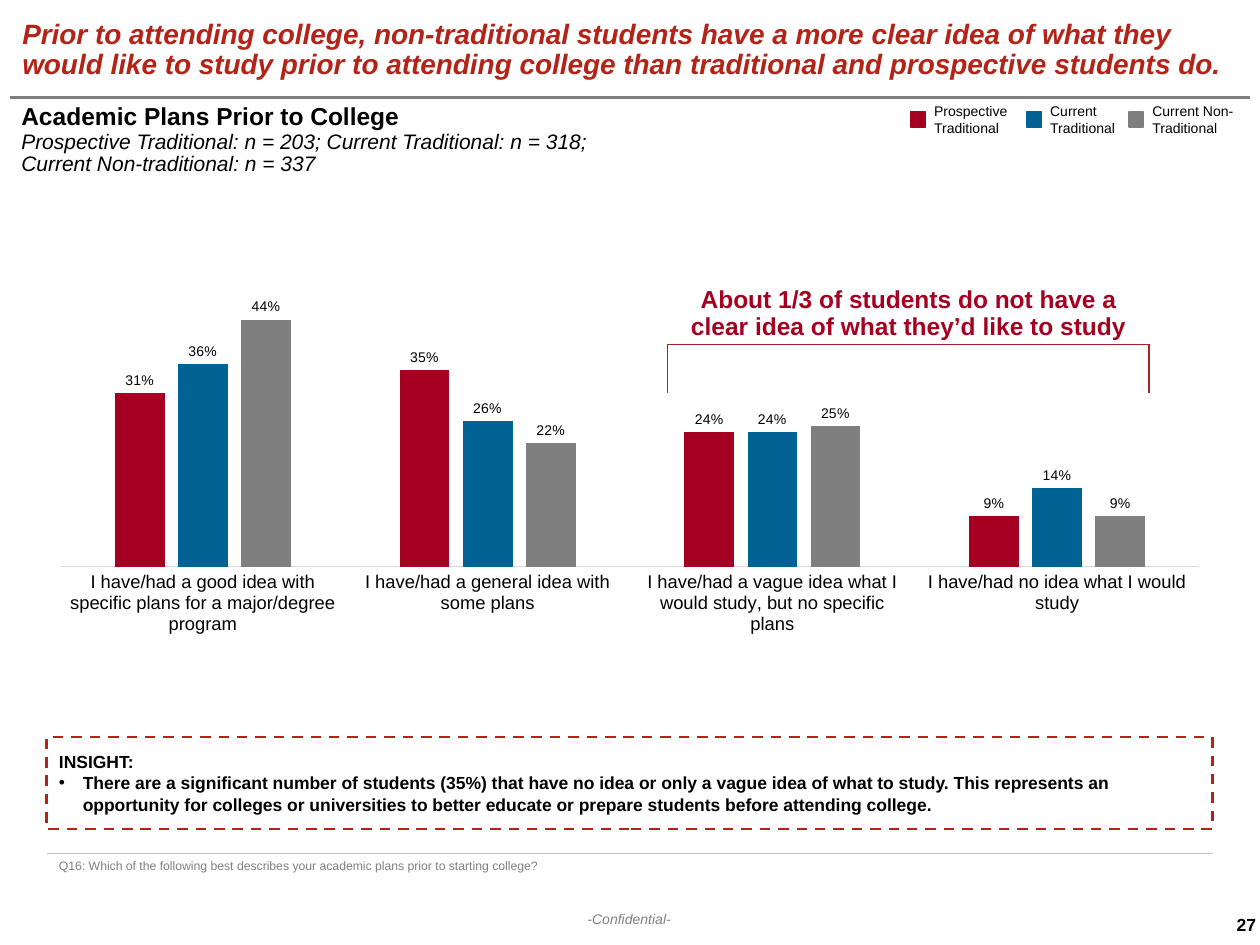
from itertools import pairwise

from lxml import etree
from pptx import Presentation
from pptx.chart.data import CategoryChartData
from pptx.dml.color import RGBColor
from pptx.enum.chart import XL_CHART_TYPE, XL_LABEL_POSITION, XL_TICK_MARK
from pptx.enum.dml import MSO_LINE
from pptx.enum.shapes import MSO_CONNECTOR, MSO_SHAPE
from pptx.enum.text import MSO_ANCHOR, PP_ALIGN
from pptx.oxml import parse_xml
from pptx.oxml.ns import nsdecls, qn
from pptx.util import Cm, Pt

TOP, MID = MSO_ANCHOR.TOP, MSO_ANCHOR.MIDDLE
LEFT, CENTER = PP_ALIGN.LEFT, PP_ALIGN.CENTER
RECT = MSO_SHAPE.RECTANGLE
FONT = "Arial"

BLACK = RGBColor(0, 0, 0)
GREY = RGBColor(0x80, 0x80, 0x80)
PALE = RGBColor(0xBF, 0xBF, 0xBF)
AXIS = RGBColor(0xD9, 0xD9, 0xD9)
BRICK = RGBColor(0xB3, 0x23, 0x17)
RUST = RGBColor(0xB0, 0x1F, 0x24)
RED = RGBColor(0xA5, 0x00, 0x21)
BLUE = RGBColor(0x00, 0x63, 0x93)
STONE = RGBColor(0x7F, 0x7F, 0x7F)

TITLE = ("Prior to attending college, non-traditional students have a more "
         "clear idea of what they would like to study prior to attending "
         "college than traditional and prospective students do.")
HEAD = "Academic Plans Prior to College"
BASE = ("Prospective Traditional: n = 203; Current Traditional: n = 318; "
        "Current Non-traditional: n = 337")
CALL = ("About 1/3 of students do not have a clear idea of what they’d "
        "like to study")
POINT = ("There are a significant number of students (35%) that have no idea "
         "or only a vague idea of what to study. This represents an "
         "opportunity for colleges or universities to better educate or "
         "prepare students before attending college.")
ASK = ("Q16: Which of the following best describes your academic plans prior "
       "to starting college?")

PLANS = ["I have/had a good idea with specific plans for a major/degree program",
         "I have/had a general idea with some plans",
         "I have/had a vague idea what I would study, but no specific plans",
         "I have/had no idea what I would study"]
# name, colour, shares, legend left, legend text width
GROUPS = [
    ("Prospective Traditional", RED, (0.31, 0.35, 0.24, 0.09), 18.36, 2.06),
    ("Current Traditional", BLUE, (0.36, 0.26, 0.24, 0.14), 20.7, 2.06),
    ("Current Non-Traditional", STONE, (0.44, 0.22, 0.25, 0.09), 22.76, 2.57),
]
BRACE = [(13.46, 7.92), (13.46, 6.94), (23.16, 6.94), (23.16, 7.92)]

deck = Presentation()
deck.slide_width, deck.slide_height = Cm(25.4), Cm(19.05)
slide = deck.slides.add_slide(deck.slide_layouts[6])
shapes = slide.shapes


def style(font, size, color=BLACK, bold=False, italic=False):
    font.name, font.size = FONT, Pt(size)
    font.bold, font.italic = bold, italic
    font.color.rgb = color


def write(frame, paras, anchor=TOP, align=LEFT, space=None, wrap=True):
    """Fill a frame; each paragraph is its text and its style arguments."""
    frame.word_wrap, frame.vertical_anchor = wrap, anchor
    for i, (text, *look) in enumerate(paras):
        para = frame.add_paragraph() if i else frame.paragraphs[0]
        para.alignment = align
        if space:
            para.line_spacing = space
        run = para.add_run()
        run.text = text
        style(run.font, *look)


def label(box, paras, **opts):
    frame = shapes.add_textbox(*map(Cm, box)).text_frame
    write(frame, paras, **opts)
    return frame


def rule(start, end, color, width):
    line = shapes.add_connector(MSO_CONNECTOR.STRAIGHT,
                                *map(Cm, (*start, *end)))
    line.line.color.rgb, line.line.width = color, Pt(width)
    etree.SubElement(line._element.spPr, qn("a:effectLst"))


def block(box, color, width):
    shape = shapes.add_shape(RECT, *map(Cm, box))
    shape.shadow.inherit = False
    shape.line.color.rgb, shape.line.width = color, Pt(width)
    return shape


def bullet(para):
    props = para._p.get_or_add_pPr()
    props.set("marL", str(Cm(0.48)))
    props.set("indent", str(-Cm(0.48)))
    etree.SubElement(props, qn("a:buFont")).set("typeface", FONT)
    etree.SubElement(props, qn("a:buChar")).set("char", "•")


def add_bars(box):
    data = CategoryChartData(number_format="0%")
    data.categories = PLANS
    for name, _, shares, *_ in GROUPS:
        data.add_series(name, shares)
    chart = shapes.add_chart(XL_CHART_TYPE.COLUMN_CLUSTERED,
                             *map(Cm, box), data).chart
    chart.has_legend = chart.has_title = False
    style(chart.font, 10)

    cat, val = chart.category_axis, chart.value_axis
    cat.major_tick_mark = cat.minor_tick_mark = XL_TICK_MARK.NONE
    style(cat.tick_labels.font, 10.5)
    cat.format.line.color.rgb, cat.format.line.width = AXIS, Pt(0.75)
    val.visible = val.has_major_gridlines = False
    val.minimum_scale, val.maximum_scale = 0, 0.5

    plot = chart.plots[0]
    plot.gap_width, plot.overlap = 219, -27
    plot.vary_by_categories = False
    for series, (_, color, *_) in zip(plot.series, GROUPS):
        series.format.fill.solid()
        series.format.fill.fore_color.rgb = color
        tags = series.data_labels
        tags.show_value = True
        tags.number_format, tags.number_format_is_linked = "0%", False
        tags.position = XL_LABEL_POSITION.OUTSIDE_END
        style(tags.font, 8)

    area = chart._chartSpace.chart.plotArea
    for old in area.findall(qn("c:layout")):
        area.remove(old)
    parts = {"x": 0.012, "y": 0.163, "w": 0.977, "h": 0.587}
    modes = "".join(f'<c:{k}Mode val="edge"/>' for k in "xy")
    sizes = "".join(f'<c:{k} val="{v}"/>' for k, v in parts.items())
    area.insert(0, parse_xml(
        f'<c:layout {nsdecls("c")}><c:manualLayout>'
        f'<c:layoutTarget val="inner"/>{modes}{sizes}'
        '</c:manualLayout></c:layout>'))


# Frame of the page
label((10.16, 18.21, 5.05, 0.64), [("-Confidential-", 8, GREY, False, True)],
      anchor=MID, align=CENTER, wrap=False)
rule((25.2, 1.96), (0.2, 1.96), GREY, 1.5)
label((0.2, 0.15, 24.97, 1.75), [(TITLE, 16, BRICK, True, True)],
      anchor=MID, space=0.9)
page = label((24.77, 18.42, 0.6, 0.43), [("27", 10, BLACK, True)],
             anchor=MID, wrap=False)
page.margin_left = Cm(0.16)
page.margin_right = page.margin_top = page.margin_bottom = 0
label((0.94, 17.22, 22.68, 1.75), [(ASK, 7, GREY)], space=0.9)
rule((0.94, 17.2), (24.46, 17.2), PALE, 0.75)

# Chart and insight
add_bars((0.94, 4.19, 23.5, 9.65))
note = block((0.94, 14.86, 23.5, 1.85), BRICK, 1.5)
note.fill.background()
note.line.dash_style = MSO_LINE.DASH
write(note.text_frame,
      [("INSIGHT:", 10, BLACK, True), (POINT, 10, BLACK, True)], anchor=MID)
bullet(note.text_frame.paragraphs[1])

# Heading, callout and legend
label((0.18, 1.98, 13.28, 0.97),
      [(HEAD, 14, BLACK, True), (BASE, 12, BLACK, False, True)], space=0.9)
for start, end in pairwise(BRACE):
    rule(start, end, RUST, 0.75)
label((13.28, 5.94, 10.08, 0.79), [(CALL, 14, RED, True)],
      anchor=MID, align=CENTER, space=0.9)
for name, color, _, left, width in GROUPS:
    key = block((left, 2.26, 0.3, 0.3), color, 0.75)
    key.fill.solid()
    key.fill.fore_color.rgb = color
    label((left + 0.22, 2.26, width, 0.3), [(name, 8)], anchor=MID)

deck.save("out.pptx")
